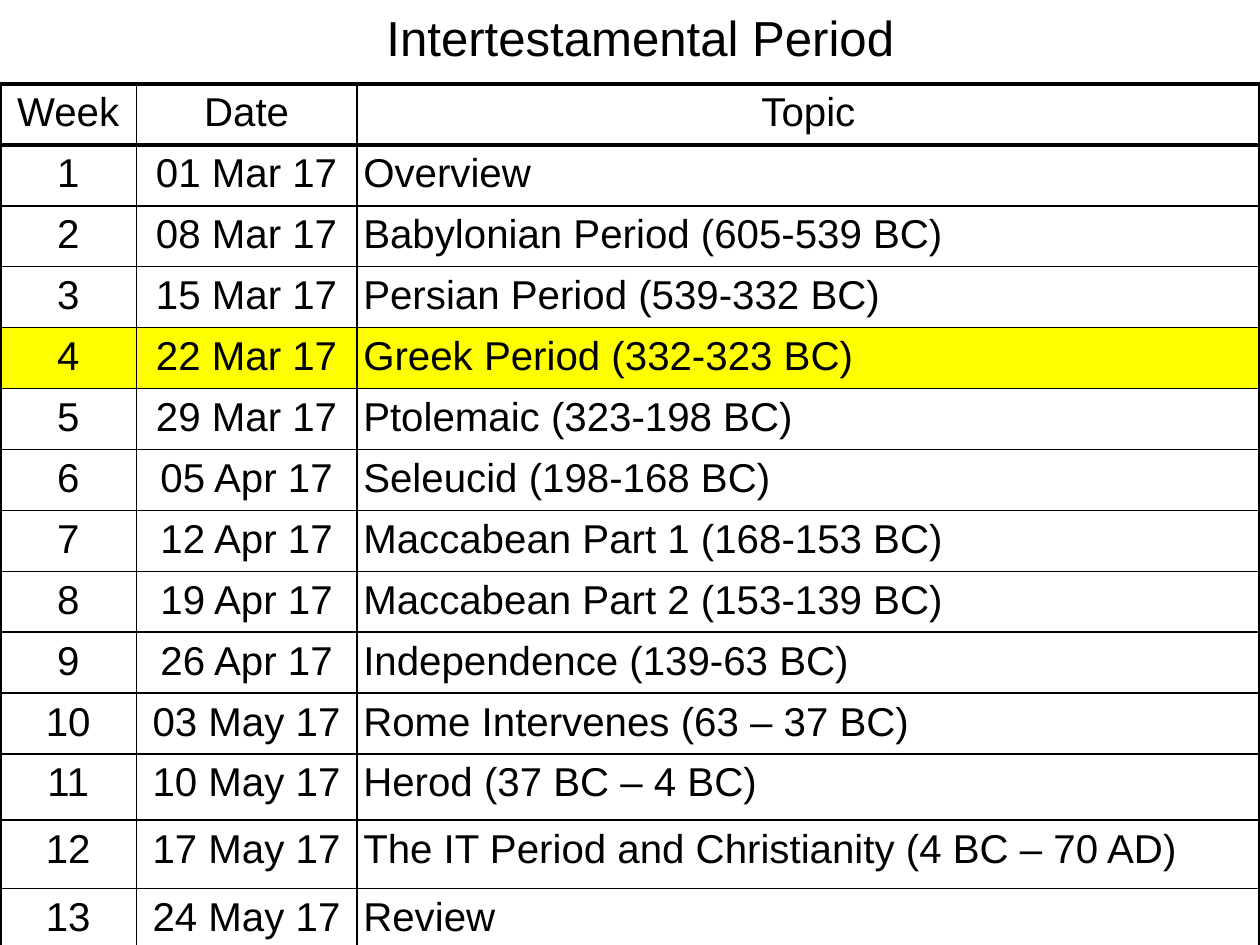
from lxml import etree
from pptx import Presentation
from pptx.dml.color import RGBColor
from pptx.enum.text import MSO_ANCHOR, PP_ALIGN
from pptx.oxml.ns import qn
from pptx.util import Pt

CENTER, LEFT = PP_ALIGN.CENTER, PP_ALIGN.LEFT
TOP, MIDDLE = MSO_ANCHOR.TOP, MSO_ANCHOR.MIDDLE

# Content
TITLE = "Intertestamental Period"
HEAD = ("Week", "Date", "Topic")
PLAN = [
    ("01 Mar 17", "Overview"),
    ("08 Mar 17", "Babylonian Period (605-539 BC)"),
    ("15 Mar 17", "Persian Period (539-332 BC)"),
    ("22 Mar 17", "Greek Period (332-323 BC)"),
    ("29 Mar 17", "Ptolemaic (323-198 BC)"),
    ("05 Apr 17", "Seleucid (198-168 BC)"),
    ("12 Apr 17", "Maccabean Part 1 (168-153 BC)"),
    ("19 Apr 17", "Maccabean Part 2 (153-139 BC)"),
    ("26 Apr 17", "Independence (139-63 BC)"),
    ("03 May 17", "Rome Intervenes (63 – 37 BC)"),
    ("10 May 17", "Herod (37 BC – 4 BC)"),
    ("17 May 17", "The IT Period and Christianity (4 BC – 70 AD)"),
    ("24 May 17", "Review"),
]
ROWS = [HEAD] + [(str(week), *item) for week, item in enumerate(PLAN, 1)]
NOW = 4  # highlighted week

# Format
COLORS = {"ink": "000000", "mark": "FFFF00"}
WIDTHS = (78, 126, 516)
HEIGHT, TALL = 34.75, {11: 37.8, 12: 38.9}
HEIGHTS = [TALL.get(i, HEIGHT) for i in range(len(ROWS))]
THIN, THICK = 1, 2.25
INSET = Pt(3.6)
PAD = {f"margin_{side}": INSET for side in ("left", "top", "right", "bottom")}


def color(name):
    return RGBColor.from_string(COLORS[name])


def apply(part, values):
    for key, value in values.items():
        setattr(part, key, value)


def write(frame, text, size, align):
    para = frame.paragraphs[0]
    para.alignment = align
    run = para.add_run()
    run.text = text
    apply(run.font, {"name": "Arial", "size": Pt(size), "bold": False})
    run.font.color.rgb = color("ink")


def border(cell, sides):
    props = cell._tc.get_or_add_tcPr()
    for side, width in sides.items():
        line = etree.SubElement(props, qn(f"a:ln{side}"), w=str(Pt(width)))
        fill = etree.SubElement(line, qn("a:solidFill"))
        etree.SubElement(fill, qn("a:srgbClr"), val=COLORS["ink"])


deck = Presentation()
apply(deck, {"slide_width": Pt(720), "slide_height": Pt(540)})
slide = deck.slides.add_slide(deck.slide_layouts[6])

# Title
box = slide.shapes.add_textbox(Pt(60), Pt(0), Pt(612), Pt(42))
apply(box.text_frame, {"word_wrap": True, "vertical_anchor": MIDDLE})
write(box.text_frame, TITLE, 28.1, CENTER)

# Schedule table
table = slide.shapes.add_table(
    len(ROWS), len(HEAD), Pt(0), Pt(48), Pt(sum(WIDTHS)), Pt(sum(HEIGHTS))
).table
apply(table, {"first_row": False, "horz_banding": False})
for col, width in zip(table.columns, WIDTHS):
    col.width = Pt(width)
for row, height in zip(table.rows, HEIGHTS):
    row.height = Pt(height)

# Cells: thick lines frame the table and close the header
last_row, last_col = len(ROWS) - 1, len(HEAD) - 1
for r, row in enumerate(ROWS):
    for c, text in enumerate(row):
        cell = table.cell(r, c)
        apply(cell, {**PAD, "vertical_anchor": TOP})
        write(cell.text_frame, text, 23, LEFT if r and c == last_col else CENTER)
        border(cell, {
            "L": THICK if c == 0 else THIN,
            "R": THICK if c == last_col else THIN,
            "T": THICK if r < 2 else THIN,
            "B": THICK if r in (0, last_row) else THIN,
        })
        if r == NOW:
            cell.fill.solid()
            cell.fill.fore_color.rgb = color("mark")
        else:
            cell.fill.background()

deck.save("out.pptx")
